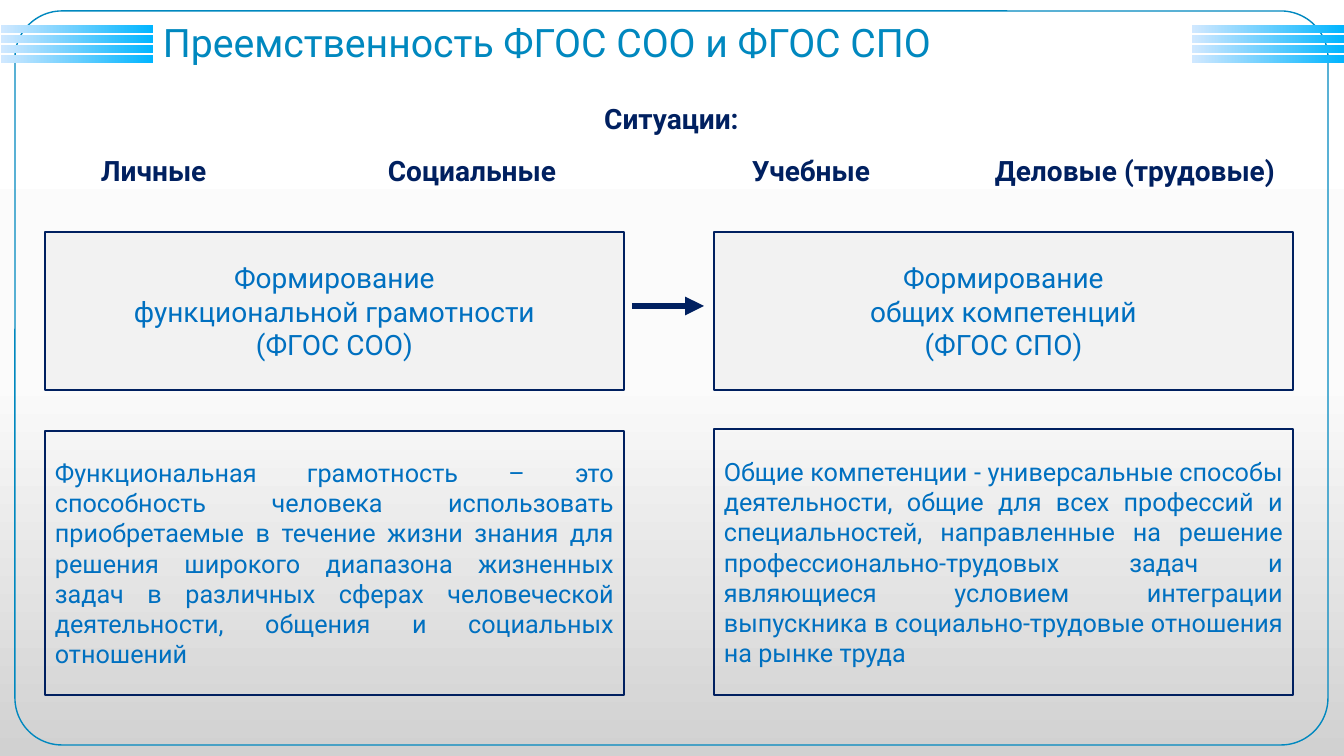
from copy import deepcopy

from lxml.etree import SubElement
from pptx import Presentation
from pptx.dml.color import RGBColor
from pptx.enum.shapes import MSO_CONNECTOR as Connector, MSO_SHAPE as Preset
from pptx.enum.text import MSO_ANCHOR as Anchor, PP_ALIGN as Align
from pptx.oxml.ns import qn
from pptx.util import Pt

PX = 914400 / 100.8
SLIDE_W, SLIDE_H = 1344, 756

NAVY = RGBColor(0x00, 0x20, 0x60)
BLUE = RGBColor(0x00, 0x70, 0xC0)
TEAL = RGBColor(0x00, 0x88, 0xBF)
PALE_GREY = RGBColor(0xF2, 0xF2, 0xF2)
BAR_STOPS = [(0, RGBColor(0xD1, 0xE8, 0xFF)), (1, RGBColor(0x00, 0xB5, 0xFF))]
BACKGROUND_STOPS = [
    (0, RGBColor(0xFF, 0xFF, 0xFF)),
    (0.5, RGBColor(0xFB, 0xFB, 0xFB)),
    (1, RGBColor(0xD1, 0xD1, 0xD1)),
]

TITLE_FONT = {"size": Pt(28)}
SITUATION_FONT = {"size": Pt(20), "bold": True}
HEADING_FONT = {"size": Pt(20)}
DEFINITION_FONT = {"size": Pt(18)}

COLUMN_LEFTS = (45, 714)
COLUMN_W = 579
HEADINGS = (
    ["Формирование", "функциональной грамотности", "(ФГОС СОО)"],
    ["Формирование", "общих компетенций", "(ФГОС СПО)"],
)
DEFINITION_TOPS = (431, 429)
DEFINITION_BOTTOM = 695
DEFINITIONS = (
    "Функциональная грамотность – это способность человека использовать "
    "приобретаемые в течение жизни знания для решения широкого диапазона "
    "жизненных задач в различных сферах человеческой деятельности, общения "
    "и социальных отношений",
    "Общие компетенции - универсальные способы деятельности, общие для всех "
    "профессий и специальностей, направленные на решение "
    "профессионально-трудовых задач и являющиеся условием интеграции "
    "выпускника в социально-трудовые отношения на рынке труда",
)
SITUATIONS = {
    "Личные": 70,
    "Социальные": 357,
    "Учебные": 721,
    "Деловые (трудовые)": 964,
}


def emu(*lengths):
    return [round(length * PX) for length in lengths]


def apply(target, values):
    for name, value in values.items():
        setattr(target, name, value)


class SlideBuilder:
    def __init__(self, slide, font="Roboto"):
        self.slide = slide
        self.shapes = slide.shapes
        self.font = font

    def gradient(self, fill, stops, angle):
        """Fill with the (position, colour) stops; angle runs counter-clockwise."""
        fill.gradient()
        fill.gradient_angle = angle
        first = fill.gradient_stops[0]._gs
        for _ in stops[2:]:
            first.addnext(deepcopy(first))
        for stop, (position, colour) in zip(fill.gradient_stops, stops):
            stop.position = position
            stop.color.rgb = colour

    def background(self, stops):
        self.gradient(self.slide.background.fill, stops, 270)

    def box(self, place, fill=None, line=None, preset=Preset.RECTANGLE):
        shape = self.shapes.add_shape(preset, *emu(*place))
        shape.shadow.inherit = False
        if fill:
            shape.fill.solid()
            shape.fill.fore_color.rgb = fill
        else:
            shape.fill.background()
        if line:
            shape.line.color.rgb = line
            shape.line.width = Pt(1)
        else:
            shape.line.fill.background()
        return shape

    def bar(self, place):
        self.gradient(self.box(place).fill, BAR_STOPS, 0)

    def put_lines(self, shape, lines, font, colour, align, anchor=Anchor.MIDDLE):
        frame = shape.text_frame
        apply(frame, {"word_wrap": True, "vertical_anchor": anchor})
        for index, line in enumerate(lines):
            paragraph = frame.add_paragraph() if index else frame.paragraphs[0]
            paragraph.alignment = align
            run = paragraph.add_run()
            run.text = line
            apply(run.font, {"name": self.font, **font})
            run.font.color.rgb = colour
        return frame.paragraphs

    def text(self, place, *args):
        return self.put_lines(self.shapes.add_textbox(*emu(*place)), *args)

    def tab_stops(self, paragraph, offsets):
        tabs = SubElement(paragraph._p.get_or_add_pPr(), qn("a:tabLst"))
        for position in emu(*offsets):
            SubElement(tabs, qn("a:tab"), pos=str(position), algn="l")

    def arrow(self, start, end, colour, width):
        arrow = self.shapes.add_connector(Connector.STRAIGHT, *emu(*start, *end))
        arrow.line.color.rgb = colour
        arrow.line.width = Pt(width)
        SubElement(arrow.line._get_or_add_ln(), qn("a:tailEnd"), type="triangle")
        SubElement(arrow._element.spPr, qn("a:effectLst"))


def main():
    deck = Presentation()
    deck.slide_width, deck.slide_height = emu(SLIDE_W, SLIDE_H)
    builder = SlideBuilder(deck.slides.add_slide(deck.slide_layouts[6]))
    builder.background(BACKGROUND_STOPS)

    frame = builder.box((15, 11, 1313, 734), line=TEAL,
                        preset=Preset.ROUNDED_RECTANGLE)
    frame.adjustments[0] = 0.064
    for left in (1, 1192):
        for row in range(4):
            builder.bar((left, 25 + 10 * row, 152, 8))

    title, = builder.text((153, 14, 878, 62), ["Преемственность ФГОС СОО и ФГОС СПО"],
                          TITLE_FONT, TEAL, Align.LEFT)
    title.line_spacing = 0.9

    for left, heading, top, definition in zip(
            COLUMN_LEFTS, HEADINGS, DEFINITION_TOPS, DEFINITIONS):
        heading_box = builder.box((left, 232, COLUMN_W, 158), PALE_GREY, NAVY)
        builder.put_lines(heading_box, heading, HEADING_FONT, BLUE, Align.CENTER)
        definition_box = builder.box(
            (left, top, COLUMN_W, DEFINITION_BOTTOM - top), line=NAVY)
        builder.put_lines(definition_box, [definition], DEFINITION_FONT, BLUE,
                          Align.JUSTIFY)
    builder.arrow((632, 306), (704, 306), NAVY, 4.5)

    situation_row = "".join("\t" + name for name in SITUATIONS)
    _, situations = builder.text((21, 97, 1301, 99), ["Ситуации:", situation_row],
                                 SITUATION_FONT, NAVY, Align.CENTER, Anchor.TOP)
    apply(situations, {"alignment": Align.LEFT, "space_before": Pt(13)})
    builder.tab_stops(situations, SITUATIONS.values())

    deck.save("out.pptx")


if __name__ == "__main__":
    main()
